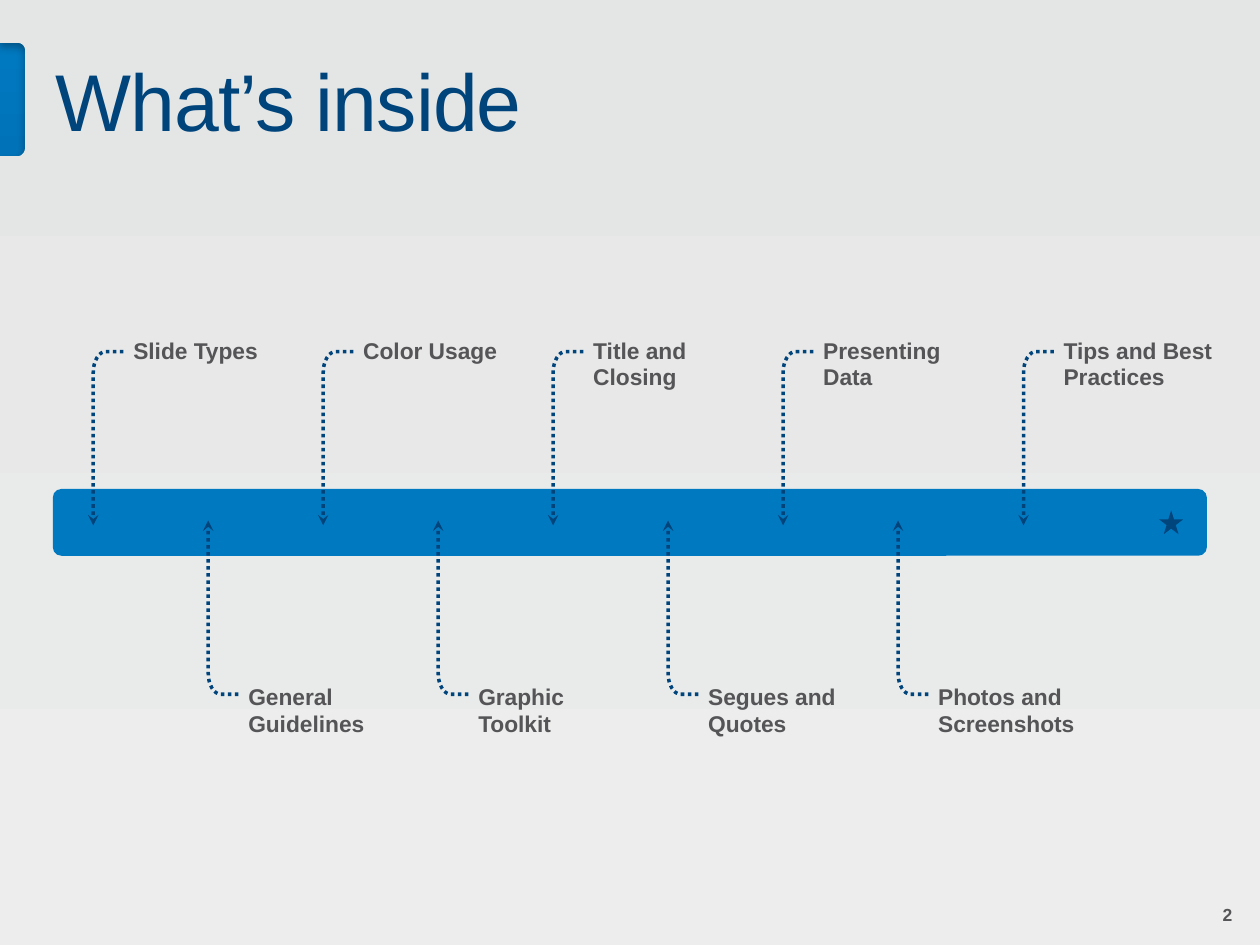
import math

from lxml import etree
from pptx import Presentation, util as u
from pptx.dml.color import RGBColor
from pptx.enum import dml, shapes, text
from pptx.oxml.ns import qn

COLORS = {"bar": "0079C1", "navy": "00447C", "star": "00457C", "label": "555457",
          "sky": "0079C0", "mist": "E4E6E5", "cloud": "ECEDEC", "shadow": "000000"}
FONT = "Arial"
TITLE = "What’s inside"
NUMBER = "2"
TOPICS = [("Slide Types", 91.4), ("General Guidelines", 92.2), ("Color Usage", 96.5),
          ("Graphic Toolkit", 77.8), ("Title and Closing", 77.8),
          ("Segues and Quotes", 109.4), ("Presenting Data", 90),
          ("Photos and Screenshots", 118.8), ("Tips and Best Practices", 115.9)]
FIRST_STEM, STEP, LAST_SHIFT = 53.3, 65.7, 6
ABOVE = {"start": 200.9, "bend": 12.2, "tip": 300.2, "label": 189.4}
BELOW = {"start": 396.7, "bend": -12.2, "tip": 297.4, "label": 387.4}


def rgb(name):
    return RGBColor.from_string(COLORS[name])


def rect(*lengths):
    return [u.Pt(length) for length in lengths]


def arc(start, corner, end, steps=8):
    """Return points of the quarter ellipse that rounds a corner."""
    points = []
    for step in range(steps + 1):
        angle = math.pi / 2 * step / steps
        points.append(tuple(s + e - k + (k - e) * math.cos(angle) + (k - s) * math.sin(angle)
                            for s, k, e in zip(start, corner, end)))
    return points


def outline(parent, points, close):
    first, *rest = [tuple(rect(*point)) for point in points]
    builder = parent.build_freeform(*first)
    builder.add_line_segments(rest, close=close)
    shape = builder.convert_to_shape()
    shape.shadow.inherit = False
    return shape


def shade(fill, stops):
    fill.gradient()
    fill.gradient_angle = 270
    for stop, (name, position) in zip(fill.gradient_stops, stops):
        stop.color.rgb = rgb(name)
        stop.position = position


def style(para, size, color, bold=False):
    font = para.font
    font.name, font.size, font.bold = FONT, u.Pt(size), bold
    font.color.rgb = rgb(color)


def add_text(parent, words, frame, size):
    box = parent.add_textbox(*rect(*frame))
    box.text_frame.word_wrap = True
    para = box.text_frame.paragraphs[0]
    para.text = words
    style(para, size, "label", bold=True)
    return box.text_frame, para


def add_panel(page):
    points = [(0, 0), (0, 24.5), *arc((10.1, 24.5), (14.4, 24.5), (14.4, 28.8)),
              *arc((14.4, 84.2), (14.4, 89.3), (10.1, 89.3)),
              (0, 89.3), (0, 540), (720, 540), (720, 0)]
    panel = outline(page.shapes, points, close=True)
    shade(panel.fill, [("mist", 0), ("cloud", 1)])
    panel.line.fill.background()
    effects = panel.element.spPr.find(qn("a:effectLst"))
    shadow = etree.SubElement(effects, qn("a:outerShdw"), blurRad=str(u.Pt(4)),
                              dist=str(u.Pt(3)), dir="5400000", rotWithShape="0")
    color = etree.SubElement(shadow, qn("a:srgbClr"), val=COLORS["shadow"])
    etree.SubElement(color, qn("a:alpha"), val="30000")
    page.shapes.title.element.addprevious(panel.element)


def add_title(page):
    title = page.shapes.title
    title.left, title.top, title.width, title.height = rect(24.5, 24.5, 648, 63.4)
    title.text_frame.vertical_anchor = text.MSO_ANCHOR.BOTTOM
    title.text_frame.auto_size = text.MSO_AUTO_SIZE.NONE
    para = title.text_frame.paragraphs[0]
    para.alignment = text.PP_ALIGN.LEFT
    span = para.add_run()
    span.text = TITLE
    style(para, 46, "navy")
    span.font._element.set("spc", "-50")


def add_solid(page, kind, frame, color):
    shape = page.shapes.add_shape(kind, *rect(*frame))
    shape.shadow.inherit = False
    shape.fill.solid()
    shape.fill.fore_color.rgb = rgb(color)
    shape.line.fill.background()
    return shape


def add_topic(page, words, width, stem, side):
    group = page.shapes.add_group_shape().shapes
    start, bend = side["start"], side["start"] + side["bend"]
    points = [(stem + 17.3, start),
              *arc((stem + 7.2, start), (stem, start), (stem, bend)), (stem, side["tip"])]
    arrow = outline(group, points, close=False)
    arrow.fill.background()
    arrow.line.color.rgb = rgb("navy")
    arrow.line.width = u.Pt(2)
    arrow.line.dash_style = dml.MSO_LINE.ROUND_DOT
    etree.SubElement(arrow.element.spPr.find(qn("a:ln")), qn("a:tailEnd"), type="stealth")
    height = 22.3 if words in ("Slide Types", "Color Usage") else 38.2
    para = add_text(group, words, (stem + 15.8, side["label"], width, height), 13)[1]
    para.line_spacing = u.Pt(15)


def main():
    deck = Presentation()
    deck.slide_width, deck.slide_height = rect(720, 540)
    page = deck.slides.add_slide(deck.slide_layouts[5])
    shade(page.background.fill, [("sky", 0.05), ("star", 0.85)])
    add_panel(page)
    add_title(page)
    frame, para = add_text(page.shapes, NUMBER, (486.7, 512.6, 224.6, 19.4), 10)
    frame.vertical_anchor = text.MSO_ANCHOR.BOTTOM
    para.alignment = text.PP_ALIGN.RIGHT
    bar = add_solid(page, shapes.MSO_SHAPE.ROUNDED_RECTANGLE, (30.2, 279.4, 659.5, 38.2), "bar")
    bar.adjustments[0] = 0.13
    for index, (words, width) in enumerate(TOPICS):
        shift = LAST_SHIFT if index == len(TOPICS) - 1 else 0
        add_topic(page, words, width, FIRST_STEM + STEP * index + shift,
                  BELOW if index % 2 else ABOVE)
    add_solid(page, shapes.MSO_SHAPE.STAR_5_POINT, (662.4, 291.6, 13.7, 13.7), "star")
    deck.save("out.pptx")


if __name__ == "__main__":
    main()
